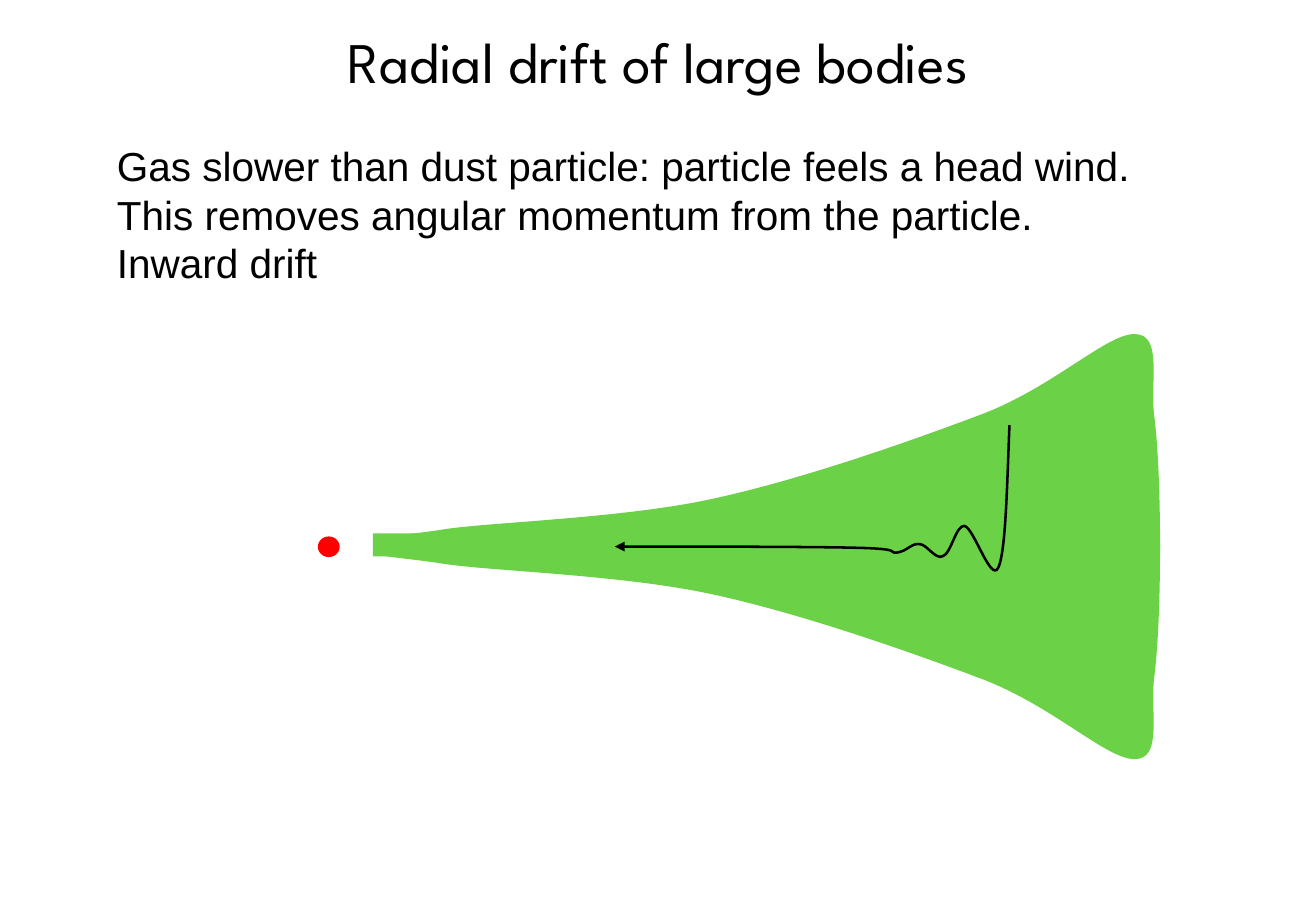
import pptx
import pptx.util
from lxml import etree
from pptx.dml.color import RGBColor
from pptx.enum.shapes import MSO_SHAPE
from pptx.enum.text import MSO_ANCHOR, MSO_AUTO_SIZE, PP_ALIGN
from pptx.oxml.ns import qn

# The slide is a grid of square cells, twelve to the inch.
CELL = pptx.util.Inches(1) / 12
COLUMNS, ROWS = 130, 90
MIDPLANE_ROW = 54

BLACK = RGBColor(0x00, 0x00, 0x00)
STAR_RED = RGBColor(0xFF, 0x00, 0x00)
DISK_GREEN = RGBColor(0x6B, 0xD2, 0x47)

TITLE = "Radial drift of large bodies"
EXPLANATION = [
    "Gas slower than dust particle: particle feels a head wind.",
    "This removes angular momentum from the particle.",
    "Inward drift",
]

# Each curve is a start point, then two handles and an end point per piece.
UPPER_DISK = [
    (43.2, 53.76),
    (31.44, 53.4), (39.24, 53.04), (43.68, 52.32),
    (48.12, 51.6), (61.32, 51.24), (70.2, 49.32),
    (79.2, 47.4), (90.36, 43.44), (97.32, 40.8),
    (104.28, 38.04), (109.32, 33), (112.08, 33),
    (114.84, 33), (113.64, 37.44), (114, 40.92),
    (114.48, 44.52), (114.6, 50.16), (114.6, 54.24),
    (79.44, 54.36), (50.64, 54.24), (43.2, 53.76),
]
DRIFT_PATH = [
    (99.72, 42),
    (99.48, 48.12), (99.36, 54.36), (98.64, 56.04),
    (97.92, 57.72), (96.24, 52.2), (95.28, 51.96),
    (94.44, 51.84), (93.96, 54.72), (93.12, 54.96),
    (92.4, 55.32), (91.56, 53.76), (90.84, 53.76),
    (90, 53.64), (89.64, 54.48), (88.56, 54.6),
    (87.6, 54.6), (89.4, 54.24), (84.72, 54.12),
    (80.04, 54), (65.64, 54), (60.72, 54),
]


def cells(*counts):
    return [pptx.util.Emu(round(count * CELL)) for count in counts]


def mirror(curve):
    """Reflect a curve in the midplane of the disk."""
    return [(column, 2 * MIDPLANE_ROW - row) for column, row in curve]


def paint(shape, color):
    shape.shadow.inherit = False
    shape.fill.solid()
    shape.fill.fore_color.rgb = color
    shape.line.fill.background()


def add_solid(shapes, preset, box, color):
    paint(shapes.add_shape(preset, *cells(*box)), color)


def add_curve(shapes, curve, close):
    """Build a freeform and join every three segments into one cubic Bezier."""
    points = [cells(*point) for point in curve]
    builder = shapes.build_freeform(*points[0], scale=1.0)
    builder.add_line_segments(points[1:], close=close)
    shape = builder.convert_to_shape()
    segments = list(shape._element.iter(qn("a:lnTo")))
    for first in range(0, len(segments), 3):
        bezier = etree.Element(qn("a:cubicBezTo"))
        segments[first].addprevious(bezier)
        for segment in segments[first:first + 3]:
            bezier.append(segment[0])
            segment.getparent().remove(segment)
    return shape


def add_curved_arrow(shapes, curve):
    arrow = add_curve(shapes, curve, close=False)
    arrow.shadow.inherit = False
    arrow.fill.background()
    arrow.line.color.rgb = BLACK
    arrow.line.width = pptx.util.Pt(1.5)
    line = arrow.line._get_or_add_ln()
    etree.SubElement(line, qn("a:tailEnd"), type="triangle")


def add_run(paragraph, text, font_name, size):
    run = paragraph.add_run()
    run.text = text
    run.font.name = font_name
    run.font.size = pptx.util.Pt(size)
    run.font.color.rgb = BLACK


def place_title(slide):
    title = slide.shapes.title
    title.left, title.top, title.width, title.height = cells(4.3, 2, 121.4, 8)
    title.text_frame.vertical_anchor = MSO_ANCHOR.MIDDLE
    paragraph = title.text_frame.paragraphs[0]
    paragraph.alignment = PP_ALIGN.CENTER
    add_run(paragraph, TITLE, "League Spartan", 34)


def add_explanation(slide):
    frame = slide.shapes.add_textbox(*cells(10.37, 13.35, 103.44, 15.72)).text_frame
    frame.word_wrap = False
    frame.auto_size = MSO_AUTO_SIZE.SHAPE_TO_FIT_TEXT
    for index, text in enumerate(EXPLANATION):
        paragraph = frame.add_paragraph() if index else frame.paragraphs[0]
        add_run(paragraph, text, "Arial", 24)


def add_disk(slide):
    disk = slide.shapes.add_group_shape()
    for half in (UPPER_DISK, mirror(UPPER_DISK)):
        paint(add_curve(disk.shapes, half, close=True), DISK_GREEN)
    add_solid(disk.shapes, MSO_SHAPE.RECTANGLE, (36.84, 52.68, 21.72, 2.28), DISK_GREEN)


def main():
    presentation = pptx.Presentation()
    presentation.slide_width, presentation.slide_height = cells(COLUMNS, ROWS)
    slide = presentation.slides.add_slide(presentation.slide_layouts[5])
    place_title(slide)
    add_explanation(slide)
    add_solid(slide.shapes, MSO_SHAPE.OVAL, (31.4, 53, 2.16, 2.04), STAR_RED)
    add_disk(slide)
    add_curved_arrow(slide.shapes, DRIFT_PATH)
    presentation.save("out.pptx")


if __name__ == "__main__":
    main()
